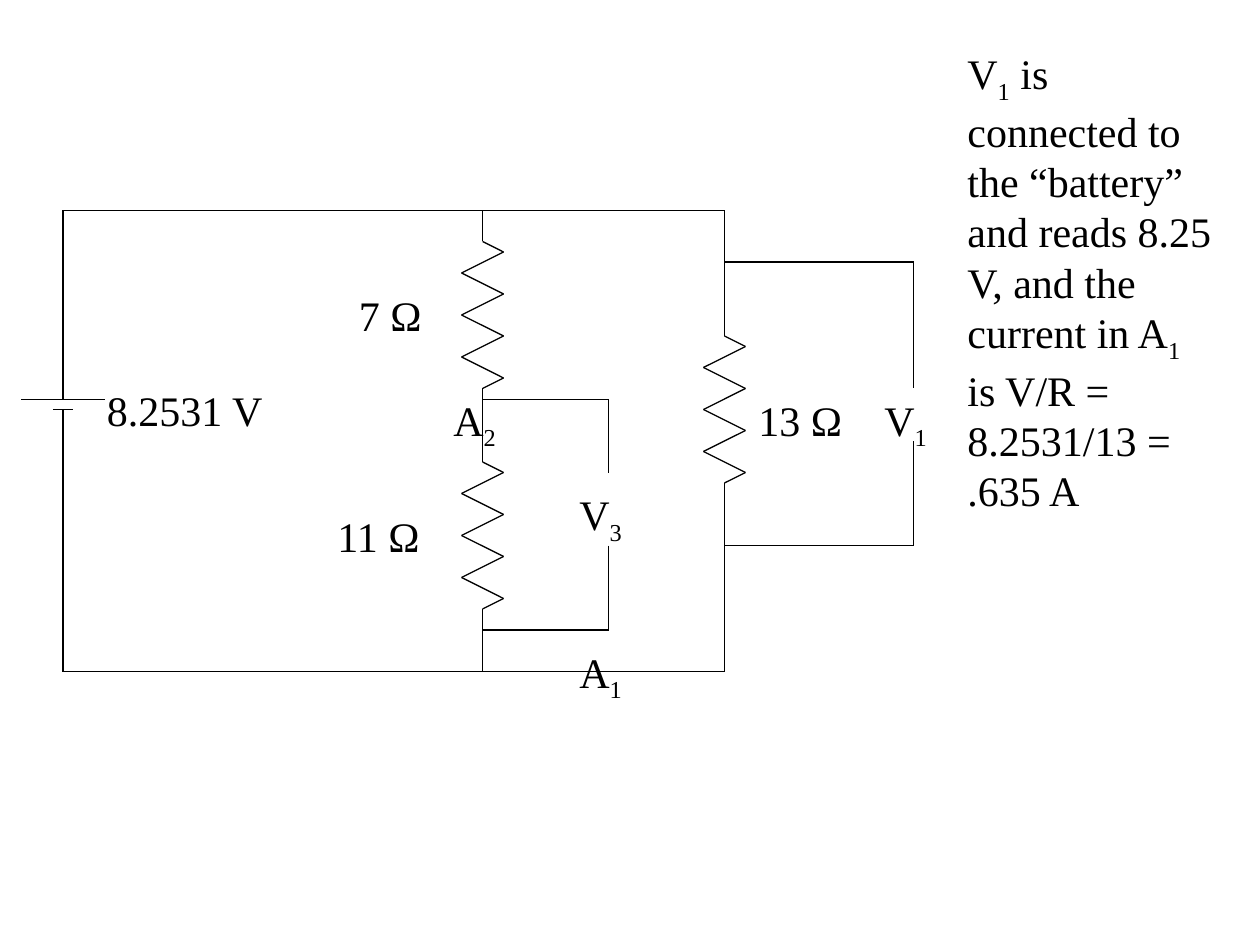
import itertools

import pptx
import pptx.dml.color
import pptx.enum.shapes
import pptx.enum.text
import pptx.oxml.ns
import pptx.util
from lxml import etree
from pptx.util import Inches

BLACK = pptx.dml.color.RGBColor(0, 0, 0)
FONT = {"name": "Times New Roman", "size": pptx.util.Pt(24)}

# Circuit levels and columns, in inches
TOP, BOTTOM = 1.67, 5.33
BATTERY_X, MIDDLE_X, RIGHT_X = 0.5, 3.83, 5.75
V3_X, V1_X = 4.83, 7.25
RESISTOR_HEIGHT = 1.5

WIRES = [
    # Outer loop, from the battery's upper plate round to the lower one
    [(BATTERY_X, 3.17), (BATTERY_X, TOP), (RIGHT_X, TOP), (RIGHT_X, 2.5)],
    [(RIGHT_X, 4), (RIGHT_X, BOTTOM), (BATTERY_X, BOTTOM), (BATTERY_X, 3.25)],
    # Battery plates
    [(0.17, 3.17), (0.83, 3.17)],
    [(0.42, 3.25), (0.58, 3.25)],
    # Middle branch between the resistors
    [(MIDDLE_X, TOP), (MIDDLE_X, 1.75)],
    [(MIDDLE_X, 3.25), (MIDDLE_X, 3.5)],
    [(MIDDLE_X, 5), (MIDDLE_X, BOTTOM)],
    # Voltmeter leads
    [(MIDDLE_X, 3.17), (V3_X, 3.17), (V3_X, 3.75)],
    [(V3_X, 4.33), (V3_X, 5), (MIDDLE_X, 5)],
    [(RIGHT_X, 2.08), (V1_X, 2.08), (V1_X, 3.08)],
    [(V1_X, 3.5), (V1_X, 4.33), (RIGHT_X, 4.33)],
]

RESISTORS = [(MIDDLE_X, 1.75), (MIDDLE_X, 3.5), (RIGHT_X, 2.5)]

# Left, top, width, and text that alternates normal and subscript parts
LABELS = [
    (0.75, 3, 1.44, ["8.2531 V"]),
    (2.75, 2.25, 0.7, ["7 Ω"]),
    (2.58, 4, 0.87, ["11 Ω"]),
    (5.92, 3.08, 0.87, ["13 Ω"]),
    (4.5, 5.08, 0.55, ["A", "1"]),
    (3.5, 3.08, 0.55, ["A", "2"]),
    (4.5, 3.83, 0.55, ["V", "3"]),
    (6.92, 3.08, 0.55, ["V", "1"]),
]

EXPLANATION = [
    "V", "1",
    " is connected to the “battery” and reads 8.25 V, and the current in A", "1",
    " is V/R = 8.2531/13 = .635 A",
]


def add_wire(slide, points):
    """Join successive points with straight lines."""
    for start, end in itertools.pairwise(points):
        line = slide.shapes.add_connector(
            pptx.enum.shapes.MSO_CONNECTOR.STRAIGHT,
            *(Inches(value) for value in start + end))
        line.line.color.rgb = BLACK
        line.line.width = pptx.util.Pt(0.75)
        etree.SubElement(line._element.spPr, pptx.oxml.ns.qn("a:effectLst"))


def add_resistor(slide, x, top):
    """Draw a vertical zigzag with a short lead at each end."""
    lead, half_width = RESISTOR_HEIGHT / 9, RESISTOR_HEIGHT / 9
    zigzag = [(x + half_width * (-1) ** i, top + 0.25 + i / 6)
              for i in range(7)]
    bottom = top + RESISTOR_HEIGHT
    add_wire(slide, [(x, top), (x, top + lead), *zigzag,
                     (x, bottom - lead), (x, bottom)])


def add_text(slide, left, top, width, height, parts, wrap=False):
    """Add a text box in which every second part is a subscript."""
    box = slide.shapes.add_textbox(*map(Inches, (left, top, width, height)))
    frame = box.text_frame
    frame.word_wrap = wrap
    frame.auto_size = pptx.enum.text.MSO_AUTO_SIZE.SHAPE_TO_FIT_TEXT
    paragraph = frame.paragraphs[0]
    for index, part in enumerate(parts):
        run = paragraph.add_run()
        run.text = part
        for attribute, value in FONT.items():
            setattr(run.font, attribute, value)
        run.font.color.rgb = BLACK
        if index % 2:
            run._r.get_or_add_rPr().set("baseline", "-25000")


def main():
    presentation = pptx.Presentation()
    presentation.slide_width = Inches(10)
    presentation.slide_height = Inches(7.5)
    slide = presentation.slides.add_slide(presentation.slide_layouts[6])

    # Circuit
    for points in WIRES:
        add_wire(slide, points)
    for x, top in RESISTORS:
        add_resistor(slide, x, top)

    # Component labels and explanation
    for left, top, width, parts in LABELS:
        add_text(slide, left, top, width, 0.5, parts)
    add_text(slide, 7.58, 0.33, 2.17, 3.69, EXPLANATION, wrap=True)

    presentation.save("out.pptx")


if __name__ == "__main__":
    main()
